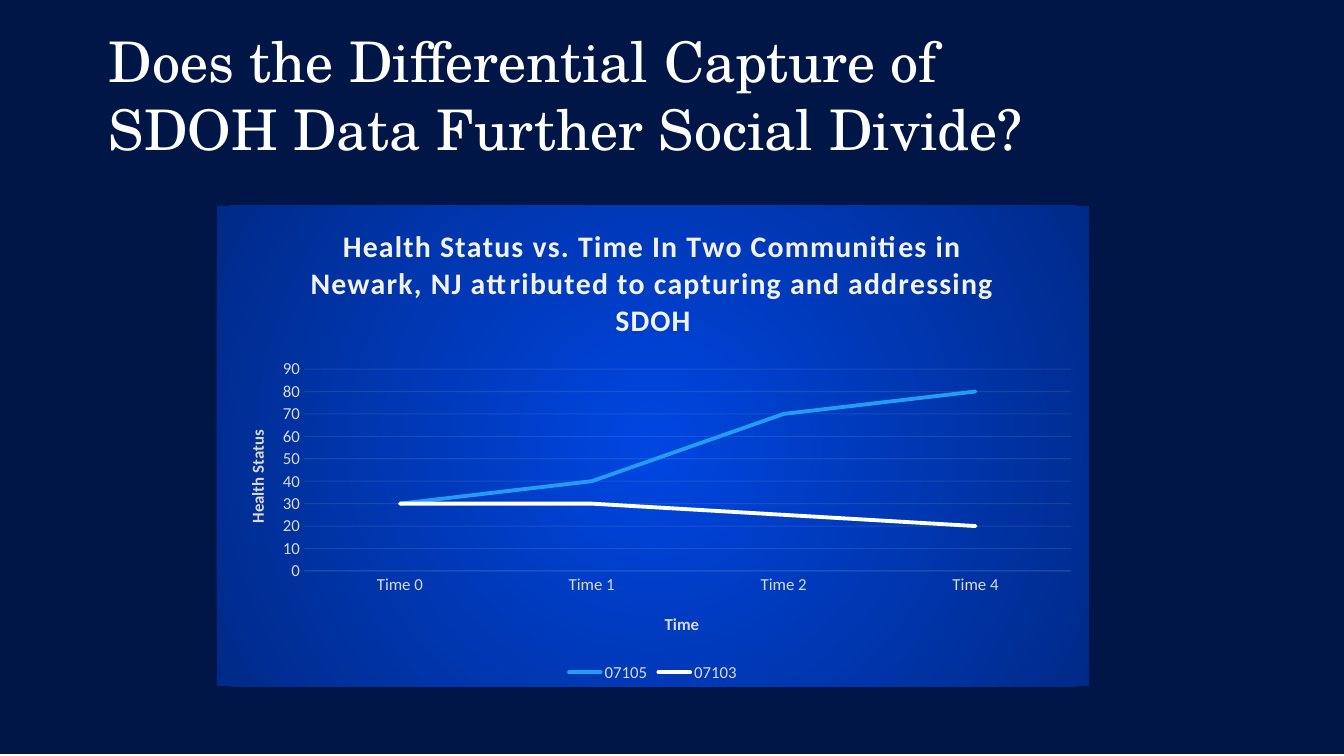
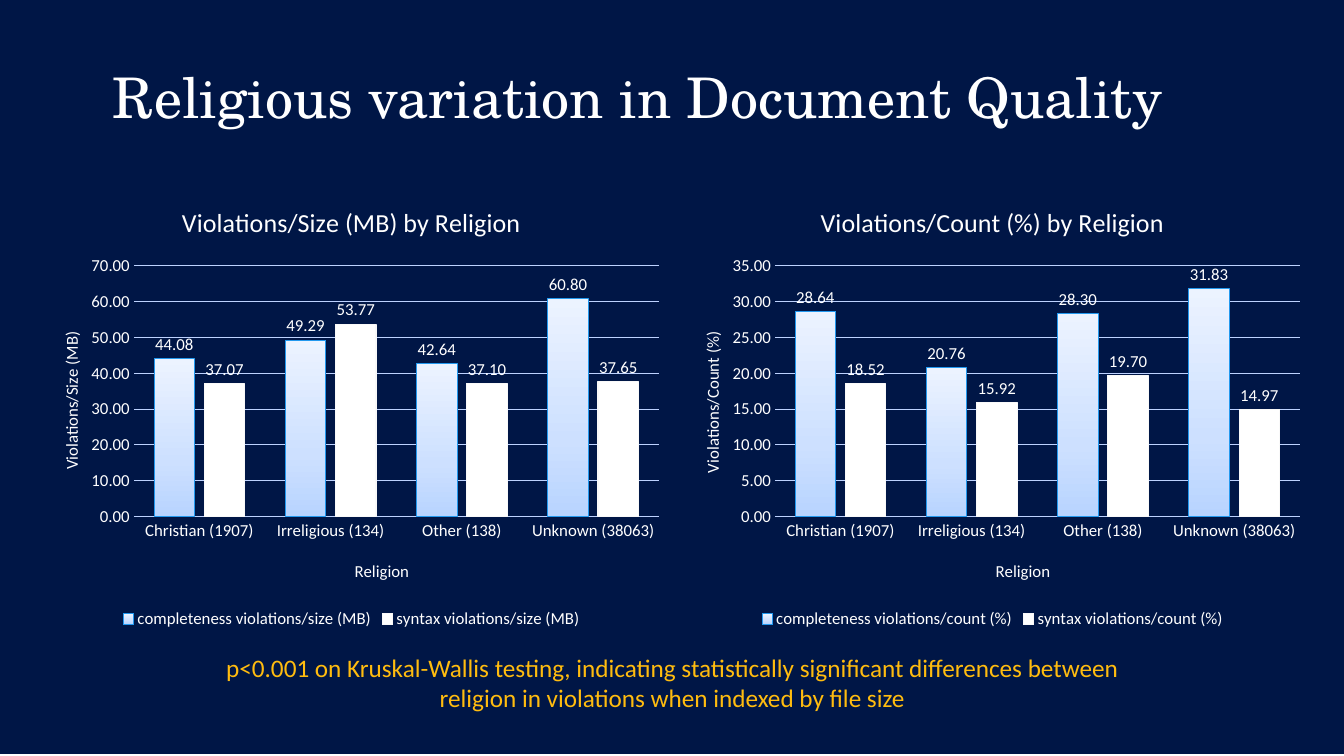
from lxml.etree import SubElement
from pptx import Presentation
from pptx.chart.data import CategoryChartData
from pptx.dml.color import RGBColor
from pptx.enum.chart import XL_CHART_TYPE, XL_LABEL_POSITION, XL_LEGEND_POSITION, XL_TICK_MARK
from pptx.enum.shapes import MSO_SHAPE
from pptx.enum.text import MSO_ANCHOR, PP_ALIGN
from pptx.oxml import parse_xml
from pptx.oxml.ns import nsdecls, qn
from pptx.util import Inches, Pt

SLIDE_WIDTH, SLIDE_HEIGHT = Inches(13.33), Inches(7.5)
NAVY, WHITE, GOLD = "001646", "FFFFFF", "FFBC0F"
PALE_GREY, MID_GREY = "F2F2F2", "D9D9D9"
SKY, SKY_EDGE, WHITE_EDGE, ICE = "249CF4", "2399EF", "F9F9F9", "BDD2FF"
ICE_FADE = [(0, "B8D4FF"), (35, "CDE0FF"), (100, "ECF3FF")]
BLUE_GLOW = [(0, "0046E1"), (100, "002A89")]
UPWARD = '<a:lin ang="16200000" scaled="0"/>'
FROM_CENTRE = '<a:path path="circle"><a:fillToRect l="50000" t="50000" r="50000" b="50000"/></a:path>'
HEADING_FONT, BODY_FONT = "TeX Gyre Schola", "Calibri"

RELIGIONS = ["Christian (1907)", "Irreligious (134)", "Other (138)", "Unknown (38063)"]
RELIGION_CHARTS = [
    ("Size (MB)", 70, 10, [44.08, 49.29, 42.64, 60.8], [37.07, 53.77, 37.1, 37.65]),
    ("Count (%)", 35, 5, [28.64, 20.76, 28.3, 31.83], [18.52, 15.92, 19.7, 14.97]),
]


def rgb(code):
    """Return the colour for a hex string."""
    return RGBColor.from_string(code)


def area(left, top, width, height):
    """Turn percentages of the slide into lengths."""
    sizes = (SLIDE_WIDTH, SLIDE_HEIGHT) * 2
    return [round(size * share / 100) for size, share in zip(sizes, (left, top, width, height))]


def style(font, size, color, bold=False, name=BODY_FONT):
    """Set the look of a font."""
    font.name, font.size, font.bold = name, Pt(size), bold
    font.color.rgb = rgb(color)


def stroke(line, color, width=0.75):
    """Draw a line in one colour."""
    line.color.rgb = rgb(color)
    line.width = Pt(width)


def gradient(stops, shading):
    """Build a gradient fill from percent stops."""
    marks = "".join(
        f'<a:gs pos="{share * 1000}"><a:srgbClr val="{color}"/></a:gs>' for share, color in stops
    )
    return parse_xml(f'<a:gradFill {nsdecls("a")}><a:gsLst>{marks}</a:gsLst>{shading}</a:gradFill>')


def arrange(holder, **shares):
    """Fix a chart part at shares of the chart's size."""
    for old in holder.findall(qn("c:layout")):
        holder.remove(old)
    layout = parse_xml(f'<c:layout {nsdecls("c")}><c:manualLayout/></c:layout>')
    for tag, value in shares.items():
        SubElement(layout[0], qn(f"c:{tag}")).set("val", str(value))
    holder.insert(0 if holder.find(qn("c:tx")) is None else 1, layout)


def add_backdrop(deck, slide):
    """Put the navy panel on the master behind every slide."""
    panel = slide.shapes.add_shape(MSO_SHAPE.RECTANGLE, *area(0, 0, 100, 99.73))
    panel.shadow.inherit = False
    panel.fill.solid()
    panel.fill.fore_color.rgb = rgb(NAVY)
    panel.line.fill.background()
    deck.slide_master.shapes.element.insert(2, panel.element)


def add_titled_slide(deck, heading, place):
    """Add a slide with its heading."""
    slide = deck.slides.add_slide(deck.slide_layouts[5])
    title = slide.shapes.title
    title.left, title.top, title.width, title.height = area(*place)
    title.text_frame.text = heading
    title.text_frame.word_wrap = True
    title.text_frame.vertical_anchor = MSO_ANCHOR.BOTTOM
    paragraph = title.text_frame.paragraphs[0]
    paragraph.alignment = PP_ALIGN.LEFT
    style(paragraph.font, 40, WHITE, name=HEADING_FONT)
    return slide


def add_note(slide, wording, place):
    """Add a centred remark."""
    frame = slide.shapes.add_textbox(*area(*place)).text_frame
    frame.word_wrap = True
    frame.text = wording
    frame.paragraphs[0].alignment = PP_ALIGN.CENTER
    style(frame.paragraphs[0].font, 18, GOLD)


def write_title(owner, wording, size, color, bold):
    """Write the title of a chart or an axis."""
    owner.has_title = True
    frame = owner.chart_title.text_frame if hasattr(owner, "chart_title") else owner.axis_title.text_frame
    frame.text = wording
    style(frame.paragraphs[0].font, size, color, bold)
    return frame.paragraphs[0]


def add_graph(slide, kind, place, categories, rows, titles, scale, color, grid, bold, number="General"):
    """Add a chart with titled axes, gridlines and a legend."""
    table = CategoryChartData(number_format=number)
    table.categories = categories
    for name, values in rows:
        table.add_series(name, values)
    chart = slide.shapes.add_chart(kind, *area(*place), table).chart
    style(chart.font, 10, color)
    chart.has_legend = True
    chart.legend.position = XL_LEGEND_POSITION.BOTTOM
    chart.legend.include_in_layout = False
    style(chart.legend.font, 12, color)
    for axis, wording in zip((chart.category_axis, chart.value_axis), titles):
        write_title(axis, wording, 12, color, bold)
        style(axis.tick_labels.font, 12, color)
        axis.major_tick_mark = axis.minor_tick_mark = XL_TICK_MARK.NONE
    stroke(chart.category_axis.format.line, grid)
    values = chart.value_axis
    values.minimum_scale, values.maximum_scale, values.major_unit = 0, *scale
    values.tick_labels.number_format = number
    values.tick_labels.number_format_is_linked = False
    values.format.line.fill.background()
    stroke(values.major_gridlines.format.line, grid)
    return chart


def arrange_graph(chart, plot, category_title, value_title):
    """Place the plot and the axis titles inside the chart."""
    left, top, width, height = plot
    arrange(chart.element.xpath(".//c:plotArea")[0], layoutTarget="inner", xMode="edge",
            yMode="edge", x=left, y=top, w=width, h=height)
    for tag, (x, y) in (("catAx", category_title), ("valAx", value_title)):
        arrange(chart.element.xpath(f".//c:{tag}/c:title")[0], xMode="edge", yMode="edge", x=x, y=y)


def add_health_chart(slide):
    """Add the line chart of health status on its glowing panel."""
    chart = add_graph(
        slide, XL_CHART_TYPE.LINE, (16.13, 27.2, 64.9, 63.6),
        ["Time 0", "Time 1", "Time 2", "Time 4"],
        [("07105", [30, 40, 70, 80]), ("07103", [30, 30, 25, 20])],
        ("Time", "Health Status"), (90, 10), MID_GREY, PALE_GREY, True,
    )
    heading = write_title(
        chart, "Health Status vs. Time In Two Communities in Newark, NJ attributed to capturing "
        "and addressing SDOH", 21.3, PALE_GREY, True)
    heading.runs[0].font._element.set("spc", "100")
    for series, color in zip(chart.plots[0].series, (SKY, WHITE)):
        series.smooth = False
        stroke(series.format.line, color, 2.75)
    for line in chart.element.xpath(".//c:ser/c:spPr/a:ln"):
        line.set("cap", "rnd")
    for tint in chart.element.xpath(".//c:catAx/c:spPr//a:srgbClr | .//c:majorGridlines//a:srgbClr"):
        SubElement(tint, qn("a:alpha")).set("val", "10000")
    panel = parse_xml(f'<c:spPr {nsdecls("c", "a")}><a:ln><a:noFill/></a:ln></c:spPr>')
    panel.insert(0, gradient(BLUE_GLOW, FROM_CENTRE))
    chart.element.find(qn("c:chart")).addnext(panel)
    arrange_graph(chart, (0.1, 0.34, 0.88, 0.42), (0.51, 0.84), (0.03, 0.46))


def add_religion_chart(slide, column, measure, top, step, completeness, syntax):
    """Add one column chart of violations by religion."""
    rows = [(f"{fault} violations/{measure[0].lower()}{measure[1:]}", values)
            for fault, values in (("completeness", completeness), ("syntax", syntax))]
    chart = add_graph(
        slide, XL_CHART_TYPE.COLUMN_CLUSTERED, (2.33 + 47.7 * column, 24.53, 47.65, 59.2),
        RELIGIONS, rows, ("Religion", f"Violations/{measure}"), (top, step), WHITE, ICE, False, "0.00",
    )
    write_title(chart, f"Violations/{measure} by Religion", 18.6, WHITE, False)
    bars = chart.plots[0]
    bars.gap_width, bars.overlap, bars.vary_by_categories = 100, -24, False
    for series, edge in zip(bars.series, (SKY_EDGE, WHITE_EDGE)):
        series.format.fill.solid()
        series.format.fill.fore_color.rgb = rgb(WHITE)
        stroke(series.format.line, edge)
    plain = chart.element.xpath(".//c:ser[1]/c:spPr/a:solidFill")[0]
    plain.getparent().replace(plain, gradient(ICE_FADE, UPWARD))
    bars.has_data_labels = True
    labels = bars.data_labels
    labels.show_value, labels.position = True, XL_LABEL_POSITION.OUTSIDE_END
    labels.number_format, labels.number_format_is_linked = "0.00", False
    style(labels.font, 12, WHITE)
    arrange_graph(chart, (0.16, 0.18, 0.82, 0.56), (0.5, 0.83), (0.04, 0.32))


def main():
    """Build and save the two slides."""
    deck = Presentation()
    deck.slide_width, deck.slide_height = SLIDE_WIDTH, SLIDE_HEIGHT

    divide = add_titled_slide(
        deck, "Does the Differential Capture of SDOH Data Further Social Divide?", (7.35, 4.13, 76.8, 17.87))
    add_backdrop(deck, divide)
    add_health_chart(divide)

    quality = add_titled_slide(deck, "Religious variation in Document Quality", (7.65, 0, 90.3, 17.87))
    add_note(
        quality, "p<0.001 on Kruskal-Wallis testing, indicating statistically significant differences "
        "between religion in violations when indexed by file size", (14.33, 85.6, 71.4, 9.47))
    for column, figures in enumerate(RELIGION_CHARTS):
        add_religion_chart(quality, column, *figures)

    deck.save("out.pptx")


if __name__ == "__main__":
    main()
